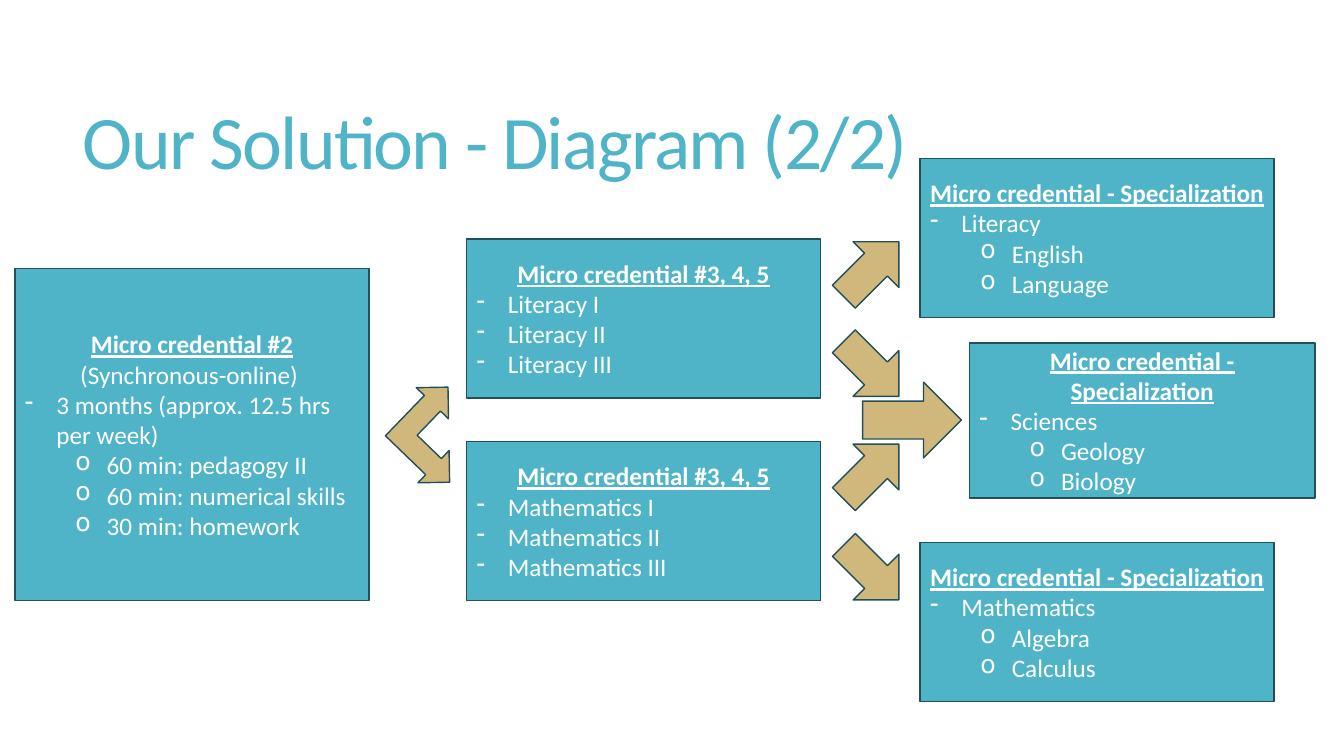
"""Builds the micro credential diagram slide."""
from lxml import etree
from pptx import Presentation
from pptx import util as u
from pptx.dml import color
from pptx.enum import shapes, text
from pptx.oxml import ns

TEAL, SAND, EDGE, WHITE = "50B4C8", "D0B87C", "234F58", "FFFFFF"
FONT = "Calibri"
BOX_SIZE = (8.92, 4.01)
SPECIALIZATION = "Micro credential - Specialization"
STAGE = "Micro credential #3, 4, 5"
BULLETS = {"-": (0, 0.79), "o": (1, 2.06)}


def paint(target, shade):
    """Give a fill or font colour its hex shade."""
    target.rgb = color.RGBColor.from_string(shade)


def add_span(para, words, size, shade, heading=False):
    """Add one formatted run to a paragraph."""
    span = para.add_run()
    span.text = words
    span.font.name = FONT
    span.font.size = u.Pt(size)
    span.font.bold = heading
    span.font.underline = heading
    paint(span.font.color, shade)
    return span


def add_shape(page, kind, place, fill, turn=0):
    """Add a filled and outlined preset shape."""
    shape = page.shapes.add_shape(kind, *map(u.Cm, place))
    shape.shadow.inherit = False
    shape.rotation = turn
    shape.fill.solid()
    paint(shape.fill.fore_color, fill)
    paint(shape.line.color, EDGE)
    shape.line.width = u.Pt(1)
    return shape


def set_bullet(para, mark):
    """Give a paragraph a hanging bullet at the level of its mark."""
    level, margin = BULLETS[mark]
    para.level = level
    props = para._p.get_or_add_pPr()
    props.set("marL", str(u.Cm(margin)))
    props.set("indent", str(-u.Cm(0.79)))
    etree.SubElement(props, ns.qn("a:buChar")).set("char", mark)


def add_box(page, place, heading, lines):
    """Add a credential box with a heading and (mark, words) lines."""
    box = add_shape(page, shapes.MSO_SHAPE.RECTANGLE, place, TEAL)
    frame = box.text_frame
    frame.word_wrap = True
    frame.vertical_anchor = text.MSO_ANCHOR.MIDDLE
    para = frame.paragraphs[0]
    para.alignment = text.PP_ALIGN.CENTER
    add_span(para, heading, 18, WHITE, heading=True)
    for mark, words in lines:
        para = frame.add_paragraph()
        para.alignment = text.PP_ALIGN.LEFT if mark else text.PP_ALIGN.CENTER
        if mark:
            set_bullet(para, mark)
        add_span(para, words, 18, WHITE)


def add_title(page, words):
    """Place and format the slide title."""
    title = page.shapes.title
    title.left, title.top, title.width, title.height = map(u.Cm, (1.83, 1.4, 29.92, 4.6))
    frame = title.text_frame
    frame.auto_size = text.MSO_AUTO_SIZE.NONE
    frame.word_wrap = True
    frame.vertical_anchor = text.MSO_ANCHOR.MIDDLE
    para = frame.paragraphs[0]
    para.alignment = text.PP_ALIGN.LEFT
    para.line_spacing = 0.85
    span = add_span(para, words, 54, TEAL)
    span.font._element.set("spc", "-120")


def main():
    """Build and save the slide."""
    deck = Presentation()
    deck.slide_width, deck.slide_height = u.Cm(33.87), u.Cm(19.05)
    page = deck.slides.add_slide(deck.slide_layouts[5])
    add_title(page, "Our Solution - Diagram (2/2)")

    add_box(page, (0.38, 6.76, 8.92, 8.38), "Micro credential #2", [
        ("", "(Synchronous-online) "),
        ("-", "3 months (approx. 12.5 hrs per week)"),
        ("o", "60 min: pedagogy II"),
        ("o", "60 min: numerical skills"),
        ("o", "30 min: homework"),
    ])
    for top, subject in ((6.02, "Literacy"), (11.13, "Mathematics")):
        lines = [("-", f"{subject} {grade}") for grade in ("I", "II", "III")]
        add_box(page, (11.76, top, *BOX_SIZE), STAGE, lines)

    specializations = (
        ((23.19, 3.99, *BOX_SIZE), "Literacy", "English", "Language"),
        ((24.43, 8.64, 8.71, 3.91), "Sciences", "Geology", "Biology"),
        ((23.19, 13.67, *BOX_SIZE), "Mathematics", "Algebra", "Calculus"),
    )
    for place, subject, *topics in specializations:
        lines = [("-", subject)] + [("o", topic) for topic in topics]
        add_box(page, place, SPECIALIZATION, lines)

    kinds = shapes.MSO_SHAPE
    add_shape(page, kinds.LEFT_UP_ARROW, (9.78, 9.83, 2.26, 2.26), SAND, 134)
    for top, turn in ((5.97, 315), (8.48, 45), (11.07, 315), (13.61, 45)):
        add_shape(page, kinds.RIGHT_ARROW, (20.98, top, 1.96, 1.63), SAND, turn)
    add_shape(page, kinds.RIGHT_ARROW, (21.74, 9.63, 2.49, 1.91), SAND)
    deck.save("out.pptx")


if __name__ == "__main__":
    main()
